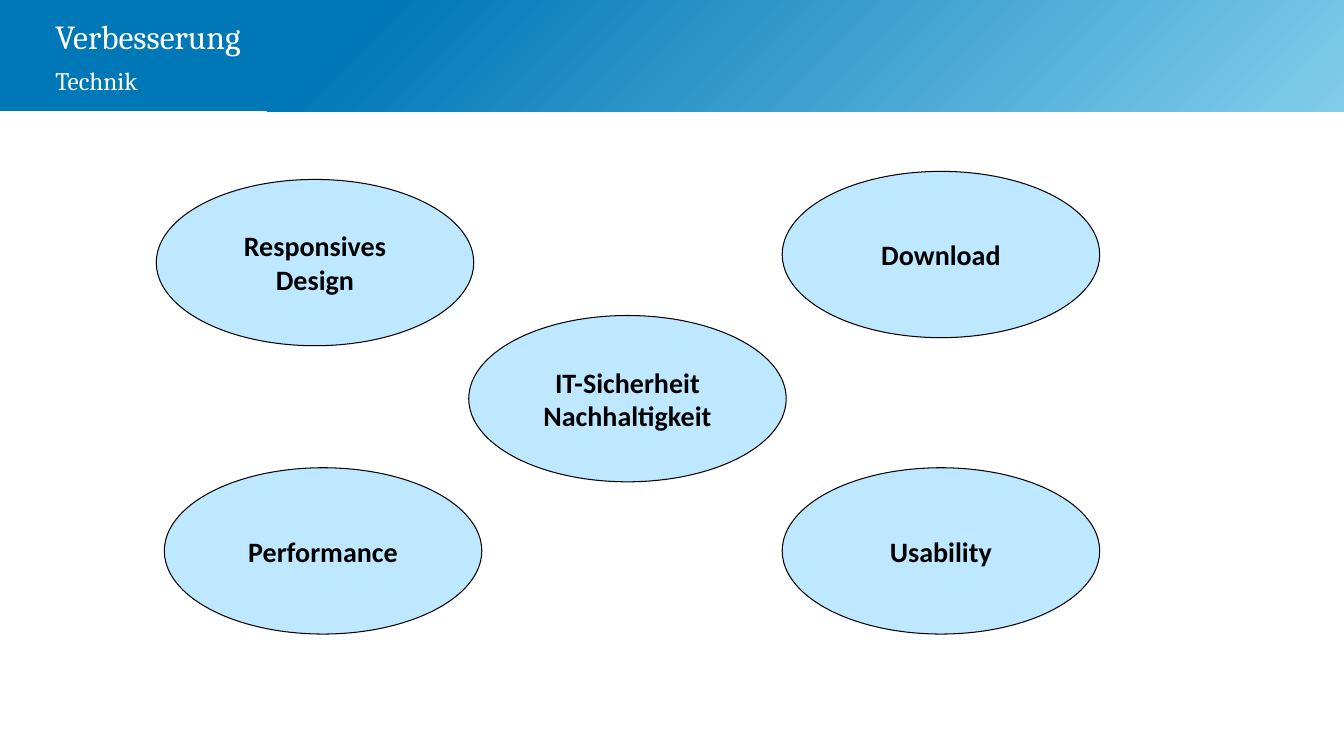
from dataclasses import dataclass

from pptx import Presentation
from pptx.dml.color import RGBColor
from pptx.enum.shapes import MSO_SHAPE
from pptx.enum.text import MSO_ANCHOR, PP_ALIGN
from pptx.oxml import parse_xml
from pptx.oxml.ns import nsdecls, qn
from pptx.util import Pt

RECTANGLE = MSO_SHAPE.RECTANGLE
OVAL = MSO_SHAPE.OVAL
MIDDLE = MSO_ANCHOR.MIDDLE
CENTER = PP_ALIGN.CENTER


@dataclass(frozen=True)
class Theme:
    white: str = "FFFFFF"
    black: str = "000000"
    bubble: str = "BDE8FF"
    banner: tuple = ((0, "80CDEB"), (74, "0077B6"), (100, "0077B6"))
    heading_font: str = "Cambria"
    body_font: str = "Calibri"
    title_size: int = 24
    subtitle_size: int = 18
    bubble_size: int = 20


THEME = Theme()
SLIDE_SIZE = (960, 540)
BUBBLE_SIZE = (226.8, 118.8)
BUBBLES = (
    (558.72, 334.08, ("Usability",)),
    (117.36, 334.08, ("Performance",)),
    (111.6, 128.16, ("Responsives", "Design")),
    (558.72, 122.4, ("Download",)),
    (334.8, 225.36, ("IT-Sicherheit", "Nachhaltigkeit")),
)


def set_format(target, values):
    for name, value in values.items():
        setattr(target, name, value)


def add_span(para, text, color, **values):
    span = para.add_run()
    span.text = text
    set_format(span.font, values)
    span.font.color.rgb = RGBColor.from_string(color)


def add_shape(page, kind, left, top, width, height):
    shape = page.shapes.add_shape(kind, Pt(left), Pt(top), Pt(width), Pt(height))
    shape.shadow.inherit = False
    return shape


def add_banner(page):
    banner = add_shape(page, RECTANGLE, 0, 0, SLIDE_SIZE[0], 79.5)
    banner.line.fill.background()
    banner.fill.gradient()
    stops = "".join(
        f'<a:gs pos="{percent * 1000}"><a:srgbClr val="{color}"/></a:gs>'
        for percent, color in THEME.banner
    )
    gradient = parse_xml(
        f'<a:gradFill {nsdecls("a")} rotWithShape="1"><a:gsLst>{stops}</a:gsLst>'
        '<a:path path="circle"><a:fillToRect l="100000" t="100000"/></a:path>'
        "</a:gradFill>"
    )
    properties = banner.element.spPr
    properties.replace(properties.find(qn("a:gradFill")), gradient)


def add_heading(page, title, subtitle):
    box = page.shapes.add_textbox(Pt(39.6), Pt(8.64), Pt(881.28), Pt(62.64))
    frame = box.text_frame
    set_format(frame, {
        "word_wrap": True, "vertical_anchor": MIDDLE, "margin_left": 0,
        "margin_top": 0, "margin_right": 0, "margin_bottom": 0,
    })
    para = frame.paragraphs[0]
    para.line_spacing = Pt(28)
    font = THEME.heading_font
    add_span(para, title, THEME.white, name=font, size=Pt(THEME.title_size))
    para.add_line_break()
    add_span(para, subtitle, THEME.white, name=font, size=Pt(THEME.subtitle_size))


def add_bubble(page, left, top, lines):
    bubble = add_shape(page, OVAL, left, top, *BUBBLE_SIZE)
    bubble.fill.solid()
    bubble.fill.fore_color.rgb = RGBColor.from_string(THEME.bubble)
    bubble.line.color.rgb = RGBColor.from_string(THEME.black)
    bubble.line.width = Pt(0.75)
    frame = bubble.text_frame
    set_format(frame, {"word_wrap": True, "vertical_anchor": MIDDLE})
    for index, line in enumerate(lines):
        para = frame.add_paragraph() if index else frame.paragraphs[0]
        para.alignment = CENTER
        add_span(para, line, THEME.black, name=THEME.body_font,
                 size=Pt(THEME.bubble_size), bold=True)


def main():
    deck = Presentation()
    deck.slide_width, deck.slide_height = map(Pt, SLIDE_SIZE)
    page = deck.slides.add_slide(deck.slide_layouts[6])
    add_banner(page)
    add_heading(page, "Verbesserung", "Technik")
    for left, top, lines in BUBBLES:
        add_bubble(page, left, top, lines)
    deck.save("out.pptx")


if __name__ == "__main__":
    main()
